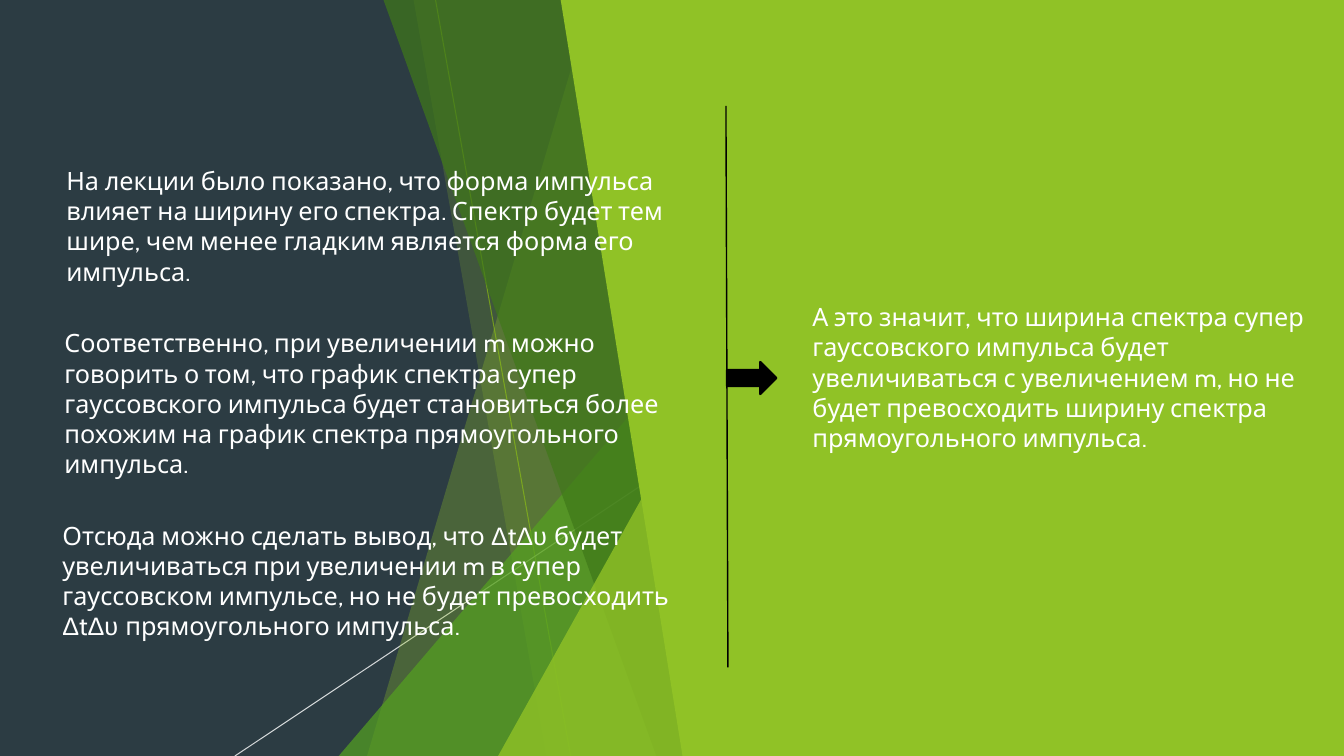
"""Builds the conclusions slide on pulse shape and spectrum width."""
import lxml.etree
import pptx
import pptx.dml.color
import pptx.enum.shapes
import pptx.enum.text
import pptx.oxml.ns
import pptx.util

Inches = pptx.util.Inches
Shape = pptx.enum.shapes.MSO_SHAPE

COLORS = {
    "navy": "2C3C43",
    "lime": "90C226",
    "green": "54A021",
    "forest": "3F7819",
    "olive": "6C921D",
    "white": "FFFFFF",
    "black": "000000",
}


class SlideBuilder:
    """Holds the text style and the current slide."""

    font = "Cabin"
    size = pptx.util.Pt(18)

    def __init__(self, slide):
        """Store the slide to draw on."""
        self.slide = slide

    def color(self, name):
        """Return a named colour."""
        return pptx.dml.color.RGBColor.from_string(COLORS[name])

    def background(self, name):
        """Fill the slide background."""
        fill = self.slide.background.fill
        fill.solid()
        fill.fore_color.rgb = self.color(name)

    def opacity(self, shape, percent):
        """Make the first colour of a shape partly transparent."""
        if percent < 100:
            node = next(shape._element.spPr.iter(pptx.oxml.ns.qn("a:srgbClr")))
            alpha = lxml.etree.SubElement(node, pptx.oxml.ns.qn("a:alpha"))
            alpha.set("val", str(percent * 1000))

    def paint(self, shape, name, percent):
        """Give a shape a flat fill with no outline or shadow."""
        shape.shadow.inherit = False
        shape.fill.solid()
        shape.fill.fore_color.rgb = self.color(name)
        shape.line.fill.background()
        self.opacity(shape, percent)

    def preset(self, kind, left, top, width, height, name, percent=100):
        """Add a filled preset shape."""
        shape = self.slide.shapes.add_shape(
            kind, Inches(left), Inches(top), Inches(width), Inches(height))
        self.paint(shape, name, percent)
        return shape

    def triangle(self, left, top, width, height, name, percent):
        """Add a right triangle with its tip at the right."""
        shape = self.preset(Shape.ISOSCELES_TRIANGLE, left, top, width, height, name, percent)
        shape.adjustments[0] = 1

    def polygon(self, points, name, percent=100):
        """Add a closed filled outline."""
        corners = [(Inches(x), Inches(y)) for x, y in points]
        outline = self.slide.shapes.build_freeform(*corners[0])
        outline.add_line_segments(corners[1:], close=True)
        self.paint(outline.convert_to_shape(), name, percent)

    def line(self, start, end, name, width=0.75, percent=100):
        """Add a straight line."""
        line = self.slide.shapes.add_connector(
            pptx.enum.shapes.MSO_CONNECTOR.STRAIGHT,
            *(Inches(value) for value in start + end))
        line.line.color.rgb = self.color(name)
        line.line.width = pptx.util.Pt(width)
        self.opacity(line, percent)
        lxml.etree.SubElement(line._element.spPr, pptx.oxml.ns.qn("a:effectLst"))

    def text(self, left, top, width, height, parts, inset_top=0.05, inset_right=0.1):
        """Add one paragraph made of text or of (text, font) spans."""
        box = self.slide.shapes.add_textbox(
            Inches(left), Inches(top), Inches(width), Inches(height))
        frame = box.text_frame
        frame.word_wrap = True
        frame.vertical_anchor = pptx.enum.text.MSO_ANCHOR.TOP
        frame.margin_top = Inches(inset_top)
        frame.margin_right = Inches(inset_right)
        para = frame.paragraphs[0]
        para.font.size = self.size
        para.font.color.rgb = self.color("white")
        if isinstance(parts, str):
            para.font.name = self.font
            para.add_run().text = parts
            return
        for words, font in parts:
            span = para.add_run()
            span.text = words
            span.font.name = font


def main():
    """Draw the slide and save it."""
    deck = pptx.Presentation()
    deck.slide_width, deck.slide_height = Inches(13.33), Inches(7.5)
    page = SlideBuilder(deck.slides.add_slide(deck.slide_layouts[6]))
    page.background("navy")

    top, bottom, edge, right = -0.01, 7.5, 6.92, 13.33
    page.line((4.32, 0), (5.66, bottom), "olive")
    page.line((7.54, 4.03), (2.33, bottom), "white", percent=80)

    def facet(top_left, bottom_left, name, percent):
        page.polygon([(top_left, top), (edge, top), (edge, bottom), (bottom_left, bottom)],
                     name, percent)

    facet(5.87, 3.64, "lime", 30)
    facet(4.1, 5.42, "lime", 20)
    page.triangle(3.36, 3.33, 3.56, 4.17, "green", 72)
    facet(3.8, 6.51, "forest", 70)
    page.triangle(4.94, 3.93, 1.99, 3.57, "lime", 80)
    page.polygon([(5.56, top), (edge, top), (edge, 0), (right, 0), (right, bottom),
                  (6.77, bottom)], "lime")

    page.text(0.54, 3.25, 6.64, 1.81,
              "Соответственно, при увеличении m можно говорить о том, что график спектра "
              "супер гауссовского импульса будет становиться более похожим на график "
              "спектра прямоугольного импульса.", inset_top=0, inset_right=0.3)
    page.text(0.56, 1.59, 6.41, 1.7,
              "На лекции было показано, что форма импульса влияет на ширину его спектра. "
              "Спектр будет тем шире, чем менее гладким является форма его импульса.")
    product = [("Δ", "Arial"), ("t", page.font), ("Δυ ", "Arial")]
    page.text(0.52, 5.11, 6.52, 1.31, [
        ("Отсюда можно сделать вывод, что ", page.font),
        *product,
        ("будет увеличиваться при увеличении m в супер гауссовском импульсе, "
         "но не будет превосходить ", page.font),
        *product,
        ("прямоугольного импульса.", page.font),
    ])
    page.text(7.96, 2.94, 5.37, 1.62,
              "А это значит, что ширина спектра супер гауссовского импульса будет "
              "увеличиваться с увеличением m, но не будет превосходить ширину спектра "
              "прямоугольного импульса.")

    page.line((7.2, 1.05), (7.22, 6.62), "black", width=1)
    arrow = page.preset(Shape.RIGHT_ARROW, 7.21, 3.59, 0.49, 0.32, "black")
    arrow.line.color.rgb = page.color("black")
    arrow.line.width = pptx.util.Pt(1.5)

    deck.save("out.pptx")


if __name__ == "__main__":
    main()
